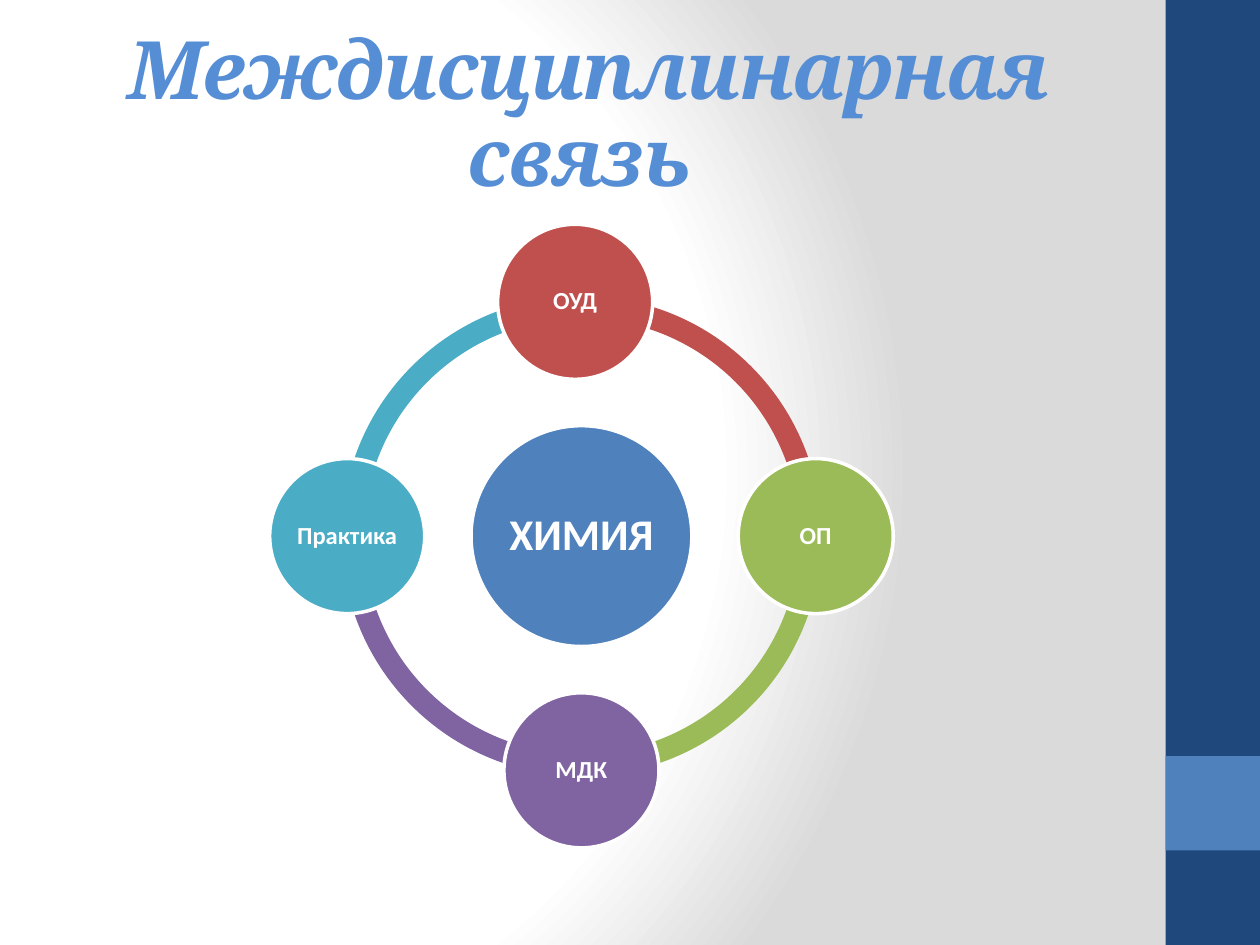
"""Builds a slide showing chemistry linked with four kinds of study."""
import math

from lxml import etree
from pptx import Presentation, util as u
from pptx.dml.color import RGBColor
from pptx.enum import shapes, text
from pptx.oxml import parse_xml

WIDTH, HEIGHT = 10, 7.5
COLORS = {
    "white": "FFFFFF", "shade": "DADADA", "navy": "1F497D", "blue": "4F81BD",
    "title": "558ED5", "red": "C0504D", "green": "9BBB59",
    "purple": "8064A2", "teal": "4BACC6",
}
DRAWING_NS = "http://schemas.openxmlformats.org/drawingml/2006/main"
# label, colour, direction in degrees, sideways shift, arc start and end
NODES = [
    ("Практика", "teal", 180, 0, 179.94, 268.37),
    ("МДК", "purple", 90, 0, 90, 180),
    ("ОП", "green", 0, 0, 0, 90),
    ("ОУД", "red", 270, -0.05, 268.37, 0.06),
]


def rgb(name):
    """Return the named colour."""
    return RGBColor.from_string(COLORS[name])


def add_filled(parent, kind, box, color):
    """Add a flat preset shape in a box of inches."""
    shape = parent.add_shape(kind, *map(u.Inches, box))
    shape.shadow.inherit = False
    shape.fill.solid()
    shape.fill.fore_color.rgb = rgb(color)
    shape.line.fill.background()
    return shape


def add_background(slide):
    """Fill the background with a round white-to-grey gradient."""
    slide.background.fill.solid()
    properties = slide.element.xpath(".//p:bgPr")[0]
    stops = "".join(
        f'<a:gs pos="{share * 1000}"><a:srgbClr val="{COLORS[name]}"/></a:gs>'
        for share, name in [(0, "white"), (75, "white"), (100, "shade")])
    gradient = parse_xml(
        f'<a:gradFill xmlns:a="{DRAWING_NS}" rotWithShape="1">'
        f'<a:gsLst>{stops}</a:gsLst><a:path path="circle">'
        '<a:fillToRect l="20000" t="50000" r="100000" b="50000"/>'
        '</a:path></a:gradFill>')
    properties.replace(properties[0], gradient)


def add_side_band(slide, left, top, width, height):
    """Draw the dark band with its lighter square."""
    rect = shapes.MSO_SHAPE.RECTANGLE
    add_filled(slide.shapes, rect, (left, top, width, height), "navy")
    add_filled(slide.shapes, rect,
               (left, top + 0.8 * height, width, width), "blue")


def add_title(slide, left, top, width, height):
    """Place and format the title."""
    title = slide.shapes.title
    title.left, title.top = u.Inches(left), u.Inches(top)
    title.width, title.height = u.Inches(width), u.Inches(height)
    frame = title.text_frame
    frame.text = "Междисциплинарная связь "
    frame.auto_size = text.MSO_AUTO_SIZE.NONE
    frame.vertical_anchor = text.MSO_ANCHOR.MIDDLE
    heading = frame.paragraphs[0]
    heading.alignment = text.PP_ALIGN.CENTER
    heading.line_spacing = 0.9
    font = heading.font
    font.name, font.size = "Cambria", u.Pt(46)
    font.bold = font.italic = True
    font.color.rgb = rgb("title")
    etree.SubElement
    heading.runs[0].font.language_id = None
    heading.runs[0].font._element.set("spc", "-100")


def add_circle(parent, center_x, center_y, size, label, color, points):
    """Draw a labelled circle around a centre."""
    box = (center_x - size / 2, center_y - size / 2, size, size)
    circle = add_filled(parent, shapes.MSO_SHAPE.OVAL, box, color)
    circle.line.color.rgb = rgb("white")
    circle.line.width = u.Pt(2)
    frame = circle.text_frame
    frame.word_wrap = True
    frame.vertical_anchor = text.MSO_ANCHOR.MIDDLE
    frame.margin_left = frame.margin_right = u.Inches(0.02)
    frame.margin_top = frame.margin_bottom = u.Inches(0.02)
    frame.text = label
    caption = frame.paragraphs[0]
    caption.alignment = text.PP_ALIGN.CENTER
    caption.line_spacing = 0.9
    caption.font.name, caption.font.size = "Calibri", u.Pt(points)
    caption.font.bold = True
    caption.font.color.rgb = rgb("white")


def add_cycle(slide, left, top, size):
    """Draw the ring of arcs, its hub and the circles on it."""
    parent = slide.shapes.add_group_shape().shapes
    center_x, center_y = left + size / 2, top + size / 2
    orbit = 0.488 * size
    for _, color, _, _, start, end in NODES:
        arc = add_filled(parent, shapes.MSO_SHAPE.BLOCK_ARC,
                         (left, top, size, size), color)
        for index, value in enumerate((start * 0.6, end * 0.6, 0.046)):
            arc.adjustments[index] = value
    add_circle(parent, center_x, center_y, 0.46 * size, "ХИМИЯ", "blue", 25)
    for label, color, direction, shift, _, _ in reversed(NODES):
        angle = math.radians(direction)
        add_circle(parent, center_x + orbit * math.cos(angle) + shift,
                   center_y + orbit * math.sin(angle),
                   0.323 * size, label, color, 14)


def main():
    """Build and save the slide."""
    deck = Presentation()
    deck.slide_width, deck.slide_height = u.Inches(WIDTH), u.Inches(HEIGHT)
    slide = deck.slides.add_slide(deck.slide_layouts[5])
    add_background(slide)
    add_side_band(slide, 0.925 * WIDTH, 0, 0.075 * WIDTH, HEIGHT)
    add_title(slide, 0.05 * WIDTH, 0.04 * HEIGHT, 0.833 * WIDTH, HEIGHT / 6)
    add_cycle(slide, 0.271 * WIDTH, 2.35, 0.381 * WIDTH)
    deck.save("out.pptx")


if __name__ == "__main__":
    main()
